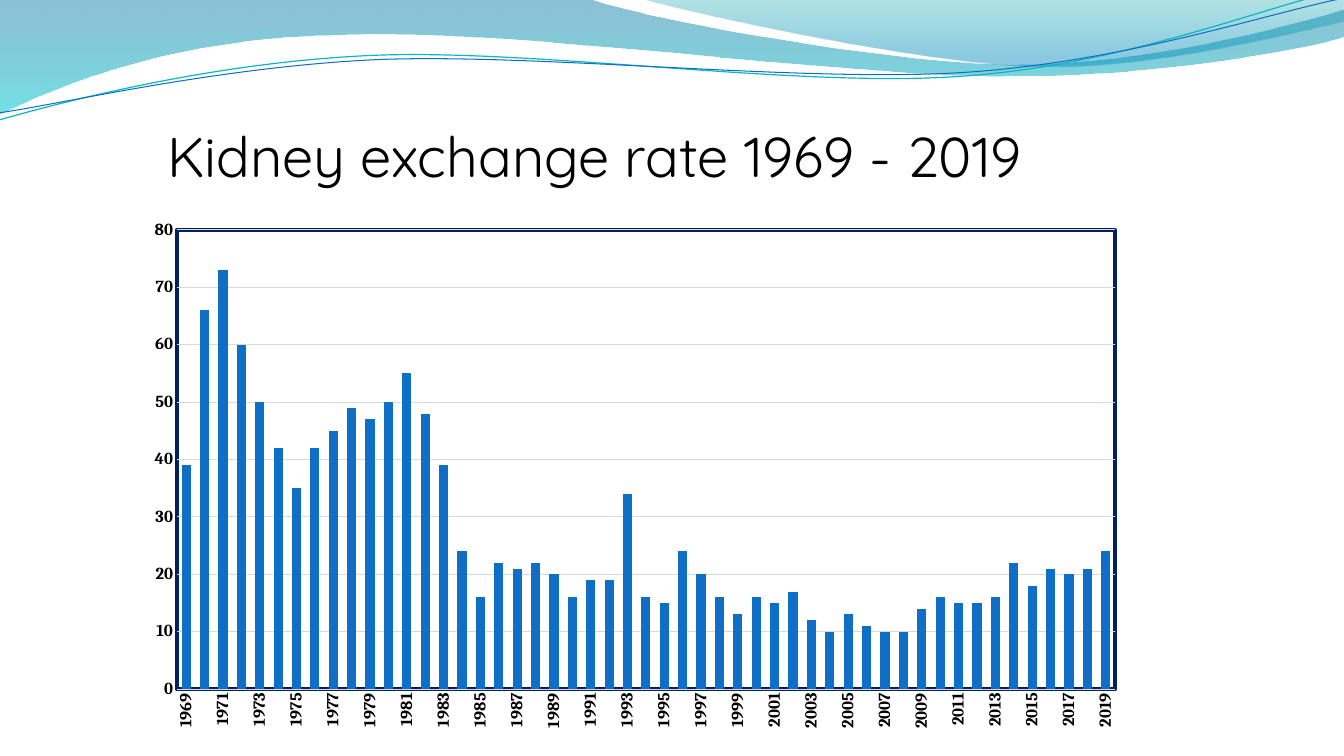
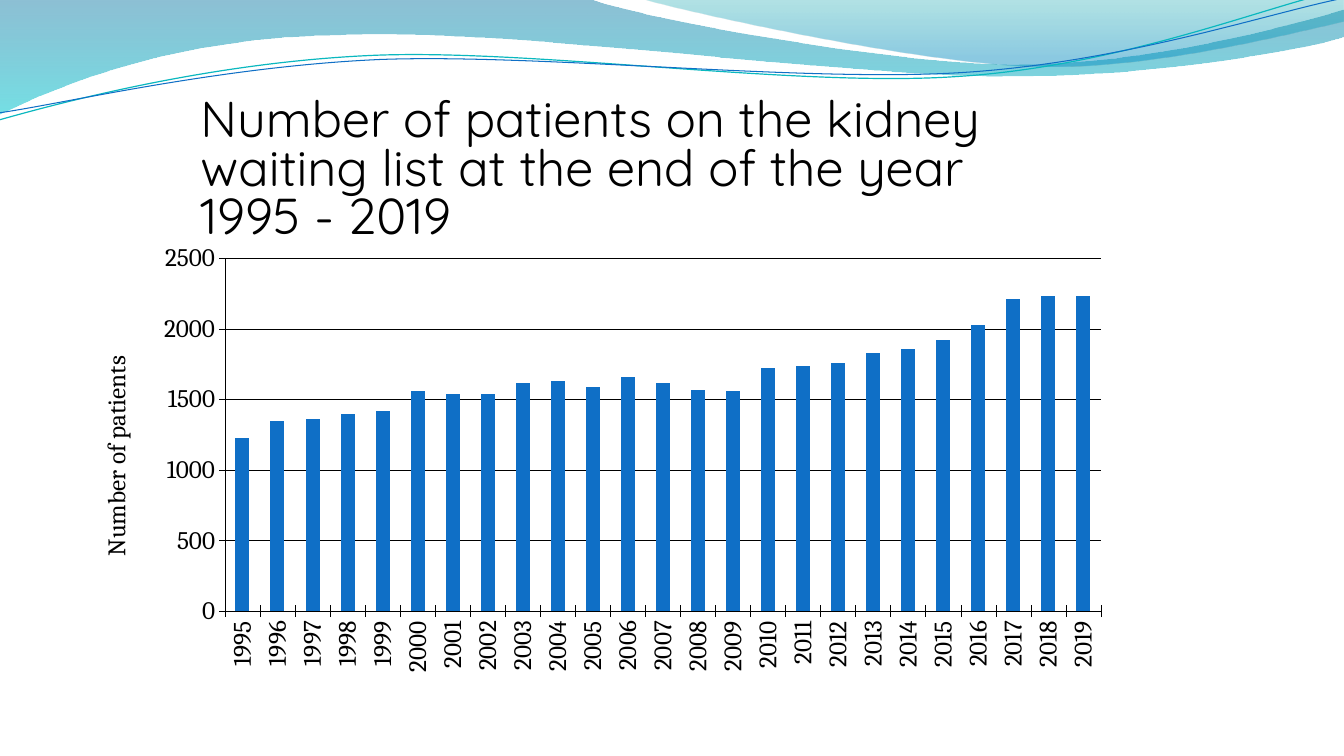
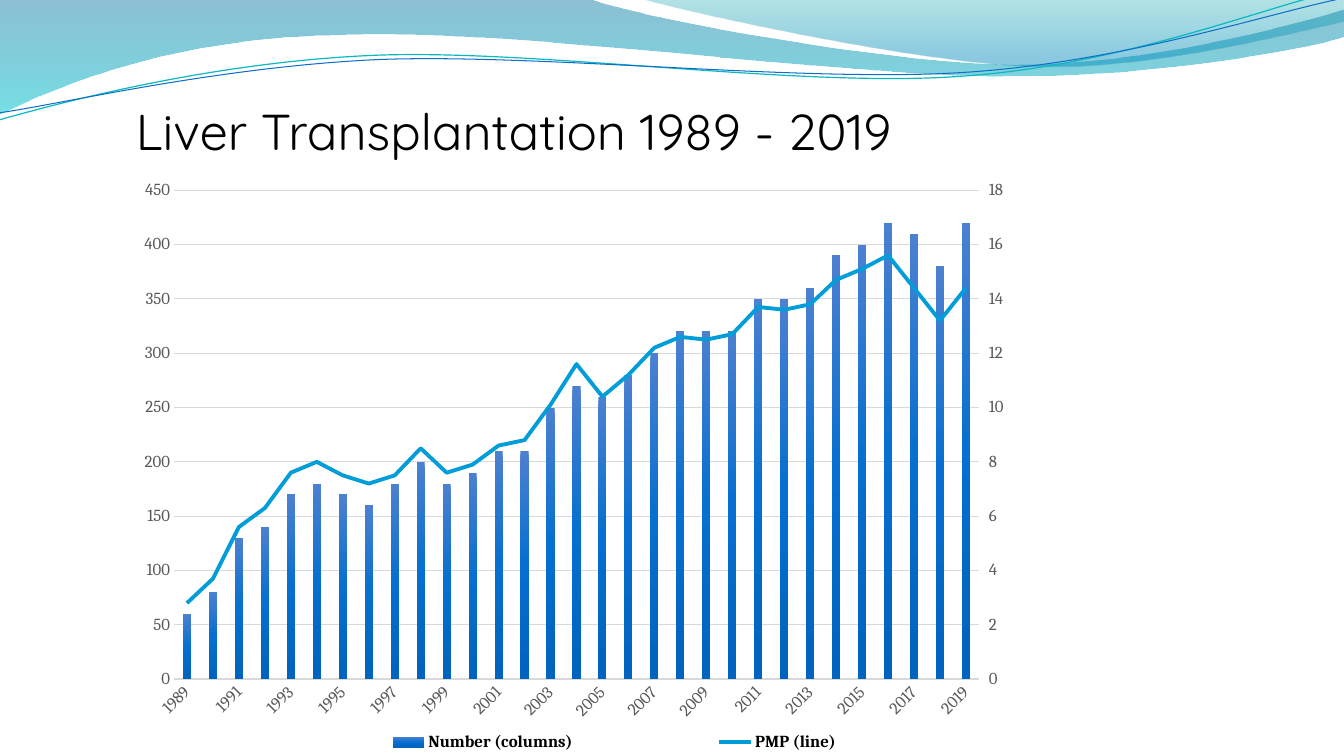
"""Build three slides on kidney and liver transplantation, each with a title and a column chart."""
from lxml.etree import SubElement
from pptx import Presentation
from pptx.chart.axis import ValueAxis
from pptx.chart.data import CategoryChartData
from pptx.dml.color import RGBColor
from pptx.enum.chart import XL_CHART_TYPE as ChartType
from pptx.enum.chart import XL_LEGEND_POSITION as LegendPosition
from pptx.enum.chart import XL_MARKER_STYLE as MarkerStyle
from pptx.enum.chart import XL_TICK_MARK as Tick
from pptx.oxml import parse_xml
from pptx.oxml.ns import nsdecls, qn
from pptx.util import Pt

THEME = {
    "text": RGBColor.from_string("000000"),
    "muted": RGBColor.from_string("595959"),
    "rule": RGBColor.from_string("D9D9D9"),
    "blue": RGBColor.from_string("0F6FC6"),
    "teal": RGBColor.from_string("0AB8BF"),
    "sky": RGBColor.from_string("009DD9"),
    "columns": [(0, "4C80D0", 100), (50, "066FCF", 100), (100, "0063BD", 100)],
    "wide_wave": [(0, "0074A1", 45), (100, "00C6CF", 55)],
    "right_wave": [(0, "00A1A9", 30), (80, "008BBF", 45)],
    "frame": "002060",
    "plot": "FFFFFF",
    "title_font": "Quicksand",
    "chart_font": "Cambria",
    "chart_size": Pt(10),
    "label_size": Pt(12),
    "large_size": Pt(18),
}


def set_gradient(fill, element, stops):
    """Give a fill a top-to-bottom gradient of (position, colour, opacity) stops."""
    fill.gradient()
    fill.gradient_angle = 270
    stop_list = next(element.iter(qn("a:gsLst")))
    for stop in list(stop_list):
        stop_list.remove(stop)
    for position, colour, opacity in stops:
        stop = SubElement(stop_list, qn("a:gs"), pos=str(position * 1000))
        shade = SubElement(stop, qn("a:srgbClr"), val=colour)
        if opacity < 100:
            SubElement(shade, qn("a:alpha"), val=str(opacity * 1000))


def set_layout(parent, values):
    """Place a chart part by fractions of the chart frame."""
    layout = parent.find(qn("c:layout"))
    if layout is None:
        layout = parent.makeelement(qn("c:layout"))
        overlay = parent.find(qn("c:overlay"))
        parent.insert(0 if overlay is None else parent.index(overlay), layout)
    manual = SubElement(layout, qn("c:manualLayout"))
    for name, value in values.items():
        SubElement(manual, qn(f"c:{name}"), val=str(value))


deck = Presentation()
deck.slide_width, deck.slide_height = Pt(960), Pt(540)
blank = deck.slide_layouts[6]

waves = [
    {"start": (-1, 0), "stops": THEME["wide_wave"], "segments": [
        [(422.6, -0.2)],
        [(456.5, 12.7), (636.5, 45.9), (727.9, 45.9)],
        [(818.6, 45.9), (919.4, 19.2), (959.8, 7)],
        [(960.5, 26.4)],
        [(943.9, 32.2), (834.5, 55.2), (715.7, 54.5)],
        [(596.9, 54.5), (366.5, 20.7), (247, 25)],
        [(123.1, 26.4), (43.9, 60.3), (-1.4, 81.9)]]},
    {"start": (459.4, -0.2), "stops": THEME["right_wave"], "segments": [
        [(488.9, 8.4), (654.5, 45.1), (738, 47.3)],
        [(820.8, 50.2), (923, 23.5), (959.8, 15.6)],
        [(959.8, 0)]]},
    {"start": (-0.7, 85.7), "line": (THEME["teal"], 0.85), "segments": [
        [(45.4, 72.7), (151.2, 44.6), (265.7, 39.6)],
        [(379.4, 34.6), (568.1, 62.6), (683.3, 54.7)],
        [(799.2, 47.5), (900.7, 5.8), (957.6, -7.2)]]},
    {"start": (-0.7, 80.6), "line": (THEME["blue"], 0.75), "segments": [
        [(44.6, 74.2), (157, 47.5), (271.4, 42.5)],
        [(386.6, 38.2), (573.1, 59), (687.6, 51.8)],
        [(802.1, 44.6), (903.6, 10.1), (959.8, -1.4)]]},
]

pages = [
    {
        "title": "Kidney exchange rate 1969 - 2019",
        "title_box": (112.3, 92.9, 751, 74.9), "title_size": 40,
        "type": ChartType.COLUMN_CLUSTERED,
        "frame": (96.5, 150.5, 715, 378), "plot": (126.4, 164.3, 670, 328),
        "first_year": 1969, "gap": 100, "overlap": -27, "rotation": -90, "skip": 2,
        "chart_bold": True, "scale": (0, 80, 10), "bordered": True,
        "labels": {"size": THEME["label_size"], "bold": True}, "label_colour": THEME["text"],
        "category_line": (THEME["rule"], 0.75), "grid": (THEME["rule"], 0.75),
        "tick": Tick.NONE,
        "series": {"Series 1": [
            39, 66, 73, 60, 50, 42, 35, 42, 45, 49, 47, 50, 55, 48, 39, 24, 16,
            22, 21, 22, 20, 16, 19, 19, 34, 16, 15, 24, 20, 16, 13, 16, 15, 17,
            12, 10, 13, 11, 10, 10, 14, 16, 15, 15, 16, 22, 18, 21, 20, 21, 24]},
    },
    {
        "title": "Number of patients on the kidney waiting list at the end of the year 1995 - 2019",
        "title_box": (136.1, 67.3, 609.1, 90), "title_size": 36,
        "type": ChartType.COLUMN_STACKED,
        "frame": (34.6, 151.2, 824.4, 370), "plot": (160.7, 184.6, 625.7, 252),
        "first_year": 1995, "gap": 150, "overlap": 100, "rotation": -90, "skip": 1,
        "chart_bold": False, "scale": (0, 2500, 500),
        "labels": {"size": THEME["large_size"], "bold": False}, "label_colour": THEME["text"],
        "category_line": (THEME["text"], 0.29), "value_line": (THEME["text"], 0.29),
        "grid": (THEME["text"], 0.29), "tick": Tick.CROSS,
        "axis_title": "Number of patients",
        "series": {"Series 1": [
            1230, 1350, 1360, 1400, 1420, 1560, 1540, 1540, 1620, 1630, 1590, 1660, 1620,
            1570, 1560, 1720, 1740, 1760, 1830, 1860, 1920, 2030, 2210, 2230, 2230]},
    },
    {
        "title": "Liver Transplantation 1989 - 2019",
        "title_box": (90, 76.3, 648, 44.6), "title_size": 36,
        "type": ChartType.COLUMN_CLUSTERED,
        "frame": (90, 120.2, 640, 427), "plot": (124.3, 135.9, 575, 349.3),
        "first_year": 1989, "gap": 219, "overlap": 0, "rotation": -45, "skip": 2,
        "chart_bold": False, "scale": (0, 450, 50), "right_scale": (0, 18, 2),
        "labels": {"size": THEME["label_size"], "bold": False}, "label_colour": THEME["muted"],
        "category_line": (THEME["rule"], 1), "grid": (THEME["rule"], 0.75),
        "tick": Tick.NONE, "stops": THEME["columns"],
        "series": {
            "Number (columns)": [
                60, 80, 130, 140, 170, 180, 170, 160, 180, 200, 180, 190, 210, 210, 250, 270,
                260, 280, 300, 320, 320, 320, 350, 350, 360, 390, 400, 420, 410, 380, 420],
            "PMP (line)": [
                2.8, 3.7, 5.6, 6.3, 7.6, 8, 7.5, 7.2, 7.5, 8.5, 7.6, 7.9, 8.6, 8.8, 10.1, 11.6,
                10.4, 11.2, 12.2, 12.6, 12.5, 12.7, 13.7, 13.6, 13.8, 14.7, 15.1, 15.6, 14.4,
                13.2, 14.4]},
    },
]

slides = [deck.slides.add_slide(blank) for page in pages]

for wave in waves:
    builder = slides[0].shapes.build_freeform(*map(Pt, wave["start"]))
    corners = [(Pt(x), Pt(y)) for segment in wave["segments"] for x, y in segment]
    builder.add_line_segments(corners, close="stops" in wave)
    shape = builder.convert_to_shape()
    steps = iter(list(shape.element.iter(qn("a:lnTo"))))
    for segment in wave["segments"]:
        sides = [next(steps) for corner in segment]
        if len(sides) == 3:
            curve = sides[0].makeelement(qn("a:cubicBezTo"))
            sides[0].addprevious(curve)
            for side in sides:
                curve.append(side[0])
                side.getparent().remove(side)
    shape.shadow.inherit = False
    if "stops" in wave:
        set_gradient(shape.fill, shape.element, wave["stops"])
        shape.line.fill.background()
    else:
        colour, width = wave["line"]
        shape.fill.background()
        shape.line.color.rgb = colour
        shape.line.width = Pt(width)
    blank.shapes.element.append(shape.element)

for slide, page in zip(slides, pages):
    box = slide.shapes.add_textbox(*map(Pt, page["title_box"]))
    box.text_frame.word_wrap = True
    para = box.text_frame.paragraphs[0]
    para.line_spacing = 0.8
    span = para.add_run()
    span.text = page["title"]
    title_format = {"name": THEME["title_font"], "size": Pt(page["title_size"])}
    for name, value in title_format.items():
        setattr(span.font, name, value)
    span.font.color.rgb = THEME["text"]

    data = CategoryChartData()
    data.categories = [str(year) for year in range(page["first_year"], 2020)]
    for name, values in page["series"].items():
        data.add_series(name, values)
    chart = slide.shapes.add_chart(page["type"], *map(Pt, page["frame"]), data).chart
    chart.has_title = False
    chart.has_legend = len(page["series"]) > 1
    fonts = [(chart.font, {"size": THEME["chart_size"], "bold": page["chart_bold"]}, THEME["text"])]
    plot_area = chart.element.find(".//" + qn("c:plotArea"))
    left_axis = chart.value_axis
    value_axes = [(left_axis, page["scale"], page["tick"])]

    columns = chart.plots[0]
    columns.vary_by_categories = False
    columns.gap_width = page["gap"]
    columns.overlap = page["overlap"]
    column_fill = columns.series[0].format.fill
    if "stops" in page:
        set_gradient(column_fill, plot_area, page["stops"])
    else:
        column_fill.solid()
        column_fill.fore_color.rgb = THEME["blue"]

    if "right_scale" in page:
        line_chart = parse_xml(
            f'<c:lineChart {nsdecls("c")}><c:grouping val="standard"/><c:varyColors val="0"/>'
            '<c:marker val="1"/><c:axId val="501"/><c:axId val="502"/></c:lineChart>')
        rate = plot_area.findall(".//" + qn("c:ser"))[1]
        for invert in rate.findall(qn("c:invertIfNegative")):
            rate.remove(invert)
        line_chart.insert(2, rate)
        plot_area.find(qn("c:barChart")).addnext(line_chart)
        hidden_axis = parse_xml(
            f'<c:catAx {nsdecls("c")}><c:axId val="501"/><c:scaling><c:orientation val="minMax"/>'
            '</c:scaling><c:delete val="1"/><c:axPos val="b"/><c:crossAx val="502"/></c:catAx>')
        right_axis = parse_xml(
            f'<c:valAx {nsdecls("c")}><c:axId val="502"/><c:scaling><c:orientation val="minMax"/>'
            '</c:scaling><c:delete val="0"/><c:axPos val="r"/>'
            '<c:numFmt formatCode="General" sourceLinked="0"/><c:tickLblPos val="nextTo"/>'
            '<c:crossAx val="501"/><c:crosses val="max"/><c:crossBetween val="between"/></c:valAx>')
        plot_area.find(qn("c:valAx")).addnext(right_axis)
        right_axis.addnext(hidden_axis)
        value_axes.append((ValueAxis(right_axis), page["right_scale"], Tick.OUTSIDE))
        rate_line = chart.plots[1].series[0]
        rate_line.smooth = False
        rate_line.marker.style = MarkerStyle.NONE
        rate_line.format.line.color.rgb = THEME["sky"]
        rate_line.format.line.width = Pt(2.75)

    chart.category_axis.has_major_gridlines = False
    axes = [(chart.category_axis, page["tick"])]
    lines = [(chart.category_axis.format.line, page["category_line"]),
             (left_axis.major_gridlines.format.line, page["grid"])]
    for axis, (low, high, unit), tick in value_axes:
        scale = {"minimum_scale": low, "maximum_scale": high, "major_unit": unit,
                 "has_major_gridlines": axis is left_axis}
        for name, value in scale.items():
            setattr(axis, name, value)
        axes.append((axis, tick))
        lines.append((axis.format.line, page.get("value_line")))
    for line, style in lines:
        if style is None:
            line.fill.background()
        else:
            line.color.rgb = style[0]
            line.width = Pt(style[1])
    for axis, tick in axes:
        axis.major_tick_mark = tick
        axis.minor_tick_mark = Tick.NONE
        fonts.append((axis.tick_labels.font, page["labels"], page["label_colour"]))

    if "axis_title" in page:
        title_frame = left_axis.axis_title.text_frame
        title_frame.text = page["axis_title"]
        fonts.append((title_frame.paragraphs[0].runs[0].font, page["labels"], page["label_colour"]))
        set_layout(plot_area.find(".//" + qn("c:title")),
                   {"xMode": "edge", "yMode": "edge", "x": 0.04, "y": 0.27})
    if chart.has_legend:
        chart.legend.position = LegendPosition.BOTTOM
        chart.legend.include_in_layout = False
        fonts.append((chart.legend.font, {"size": THEME["label_size"], "bold": True}, THEME["text"]))
        set_layout(chart.element.find(".//" + qn("c:legend")),
                   {"xMode": "edge", "yMode": "edge", "x": 0.14, "y": 0.93, "w": 0.81, "h": 0.06})
    for font, style, colour in fonts:
        for name, value in {"name": THEME["chart_font"], **style}.items():
            setattr(font, name, value)
        font.color.rgb = colour

    category_axis = plot_area.find(qn("c:catAx"))
    category_axis.find(qn("c:txPr")).find(qn("a:bodyPr")).set("rot", str(page["rotation"] * 60000))
    skip = category_axis.makeelement(qn("c:tickLblSkip"), val=str(page["skip"]))
    category_axis.find(qn("c:noMultiLvlLbl")).addprevious(skip)

    left, top, width, height = page["frame"]
    plot_left, plot_top, plot_width, plot_height = page["plot"]
    set_layout(plot_area, {
        "layoutTarget": "inner", "xMode": "edge", "yMode": "edge",
        "x": (plot_left - left) / width, "y": (plot_top - top) / height,
        "w": plot_width / width, "h": plot_height / height})
    if page.get("bordered"):
        plot_area.append(parse_xml(
            f'<c:spPr {nsdecls("c", "a")}><a:solidFill><a:srgbClr val="{THEME["plot"]}"/></a:solidFill>'
            f'<a:ln w="{Pt(3)}"><a:solidFill><a:srgbClr val="{THEME["frame"]}"/></a:solidFill></a:ln>'
            '</c:spPr>'))

deck.save("out.pptx")
